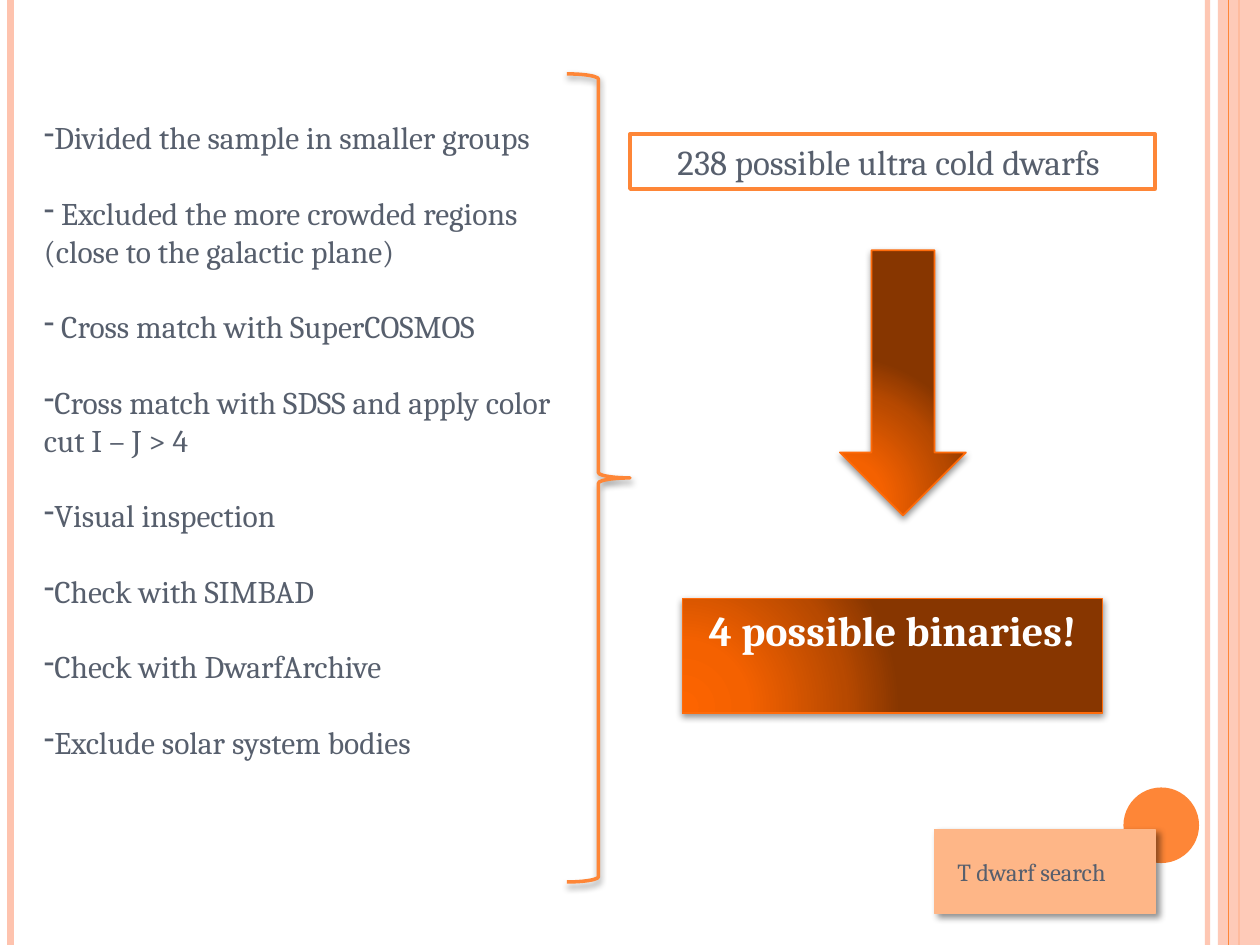
from pptx import Presentation
from pptx.dml.color import RGBColor
from pptx.enum.shapes import MSO_CONNECTOR as Connector, MSO_SHAPE as Shape
from pptx.enum.text import MSO_ANCHOR as Anchor, PP_ALIGN as Align
from pptx.oxml import parse_xml
from pptx.oxml.ns import nsdecls, qn
from pptx.util import Pt
from lxml.etree import SubElement

COLORS = {
    "text": "575F6D", "accent": "FE8637", "band": "FEC3AE", "label": "FEB687",
    "edge": "FF6B0A", "white": "FFFFFF", "black": "000000",
}
GLOW_STOPS = [(0, "FD6400"), (30, "F46100"), (75, "B74900"), (100, "873600")]
STEPS = [
    "Divided the sample in smaller groups",
    " Excluded the more crowded regions (close to the galactic plane)",
    " Cross match with SuperCOSMOS",
    "Cross match with SDSS and apply color cut I – J > 4",
    "Visual inspection",
    "Check with SIMBAD",
    "Check with DwarfArchive",
    "Exclude solar system bodies",
]


class SlideBuilder:
    font_name = "Cambria"

    def __init__(self, slide):
        self.slide = slide

    def color(self, name):
        return RGBColor.from_string(COLORS[name])

    def set_alpha(self, element, percent):
        for color in element.iter(qn("a:srgbClr")):
            SubElement(color, qn("a:alpha"), val=str(percent * 1000))

    def vertical_line(self, x, color, width, alpha=None):
        line = self.slide.shapes.add_connector(
            Connector.STRAIGHT, Pt(x), Pt(0), Pt(x), Pt(540))
        line.line.color.rgb = self.color(color)
        line.line.width = Pt(width)
        properties = line._element.spPr
        if alpha:
            self.set_alpha(properties, alpha)
        SubElement(properties, qn("a:effectLst"))

    def fill_glow(self, shape):
        stops = "".join(
            f'<a:gs pos="{position * 1000}"><a:srgbClr val="{color}"/></a:gs>'
            for position, color in GLOW_STOPS)
        gradient = parse_xml(
            f'<a:gradFill {nsdecls("a")} rotWithShape="1"><a:gsLst>{stops}</a:gsLst>'
            '<a:path path="circle"><a:fillToRect l="5000" t="100000" r="120000" b="10000"/>'
            '</a:path></a:gradFill>')
        shape._element.spPr.find(qn("a:prstGeom")).addnext(gradient)

    def add_shadow(self, shape, alpha, blur, distance, angle):
        effects = shape._element.spPr.find(qn("a:effectLst"))
        shadow = SubElement(
            effects, qn("a:outerShdw"), blurRad=str(Pt(blur)), dist=str(Pt(distance)),
            dir=str(angle * 60000), algn="ctr", rotWithShape="0")
        SubElement(shadow, qn("a:srgbClr"), val=COLORS["black"])
        self.set_alpha(shadow, alpha)

    def shape(self, kind, box, fill=None, line=None, alpha=None, shadow=None):
        shape = self.slide.shapes.add_shape(kind, *map(Pt, box))
        shape.shadow.inherit = False
        if fill == "glow":
            self.fill_glow(shape)
        elif fill:
            shape.fill.solid()
            shape.fill.fore_color.rgb = self.color(fill)
        else:
            shape.fill.background()
        if alpha:
            self.set_alpha(shape._element.spPr, alpha)
        if line:
            shape.line.color.rgb = self.color(line[0])
            shape.line.width = Pt(line[1])
        else:
            shape.line.fill.background()
        if shadow:
            self.add_shadow(shape, *shadow)
        return shape

    def add_text(self, shape, lines, size, color="text", bold=False,
                 align=Align.LEFT, gap=0, bullet=None):
        frame = shape.text_frame
        frame.word_wrap = True
        frame.vertical_anchor = Anchor.TOP
        paragraph_format = {"alignment": align, "space_after": Pt(gap)}
        font_format = {"name": self.font_name, "size": Pt(size), "bold": bold}
        for index, text in enumerate(lines):
            paragraph = frame.add_paragraph() if index else frame.paragraphs[0]
            for key, value in paragraph_format.items():
                setattr(paragraph, key, value)
            if bullet:
                properties = paragraph._p.get_or_add_pPr()
                properties.set("marL", "0")
                properties.set("indent", "0")
                SubElement(properties, qn("a:buFontTx"))
                SubElement(properties, qn("a:buChar"), char=bullet)
            run = paragraph.add_run()
            run.text = text
            for key, value in font_format.items():
                setattr(run.font, key, value)
            run.font.color.rgb = self.color(color)

    def text_box(self, box, lines, size, **style):
        self.add_text(self.slide.shapes.add_textbox(*map(Pt, box)), lines, size, **style)


def main():
    presentation = Presentation()
    presentation.slide_width = Pt(720)
    presentation.slide_height = Pt(540)
    builder = SlideBuilder(presentation.slides.add_slide(presentation.slide_layouts[6]))

    builder.vertical_line(690, "band", 3, alpha=93)
    builder.vertical_line(6, "band", 4.5)
    builder.vertical_line(708, "accent", 1.5)
    builder.shape(Shape.RECTANGLE, (696, 0, 24, 540), "band", alpha=87)
    builder.vertical_line(702, "accent", 0.75)
    builder.shape(Shape.OVAL, (642, 450, 43.2, 43.2), "accent")

    builder.text_box((18, 64, 318, 422), STEPS, 18, gap=21.6, bullet="-")

    builder.shape(Shape.RECTANGLE, (534, 474, 126, 48), "label",
                  ("label", 1), shadow=(43, 4, 3, 45))
    builder.text_box((540, 486, 126, 24.5), ["T dwarf search"], 14)

    glow_style = {"fill": "glow", "line": ("edge", 1), "shadow": (42, 4, 1.6, 90)}
    candidates = builder.shape(Shape.RECTANGLE, (360, 76.5, 300, 31.5), "white", ("accent", 2))
    builder.add_text(candidates, ["238 possible ultra cold dwarfs "], 20, align=Align.CENTER)
    builder.shape(Shape.DOWN_ARROW, (480, 143, 72, 151.5), **glow_style)
    binaries = builder.shape(Shape.RECTANGLE, (390, 342, 240, 65.5), **glow_style)
    builder.add_text(binaries, ["4 possible binaries!"], 24, "white", True, Align.CENTER)

    builder.shape(Shape.RIGHT_BRACE, (324, 42.25, 36, 461.75),
                  line=("accent", 2), shadow=(40, 4, 2, 90))
    presentation.save("out.pptx")


if __name__ == "__main__":
    main()
